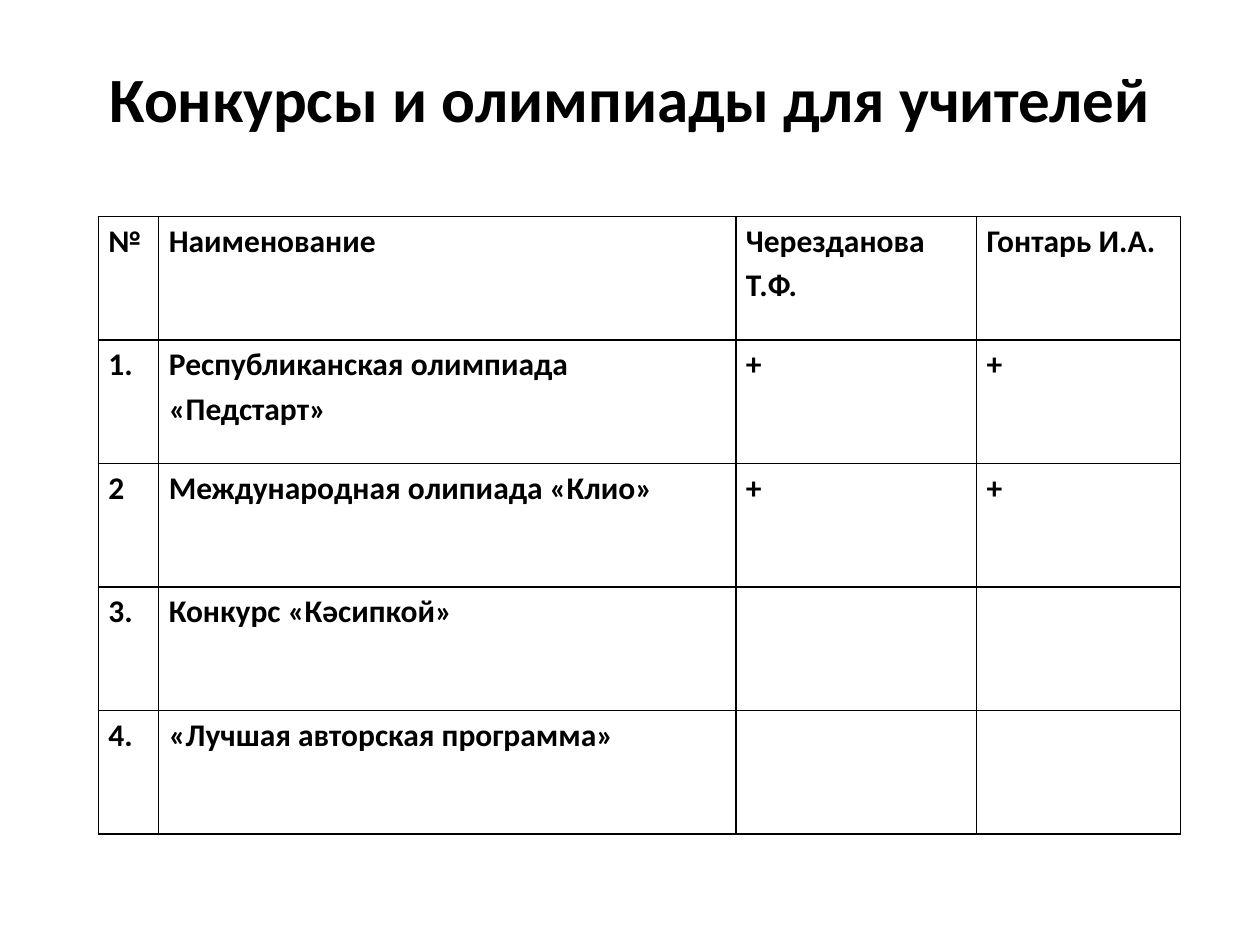
from pptx import Presentation
from pptx.dml.color import RGBColor
from pptx.enum.text import MSO_ANCHOR as Anchor, PP_ALIGN as Align
from pptx.oxml import parse_xml
from pptx.oxml.ns import nsdecls
from pptx.util import Inches, Pt

BLACK = RGBColor(0, 0, 0)
WHITE = RGBColor(255, 255, 255)

COLUMN_WIDTHS = [0.48, 4.58, 1.91, 1.62]
ROW_HEIGHT = 0.984
CONTESTS = [
    ["№", "Наименование", "Черезданова Т.Ф.", "Гонтарь И.А."],
    ["1.", "Республиканская олимпиада «Педстарт»", "+", "+"],
    ["2", "Международная олипиада «Клио»", "+", "+"],
    ["3.", "Конкурс «Кәсипкой»", "", ""],
    ["4.", "«Лучшая авторская программа»", "", ""],
]


class SlideBuilder:
    font = "Calibri"
    title_size = Pt(36)
    cell_size = Pt(18)
    cell_inset = Inches(0.08)
    line_spacing = 1.15
    border_width = Pt(1)

    def __init__(self, page):
        self.page = page

    def background(self, color):
        fill = self.page.background.fill
        fill.solid()
        fill.fore_color.rgb = color

    def format_text(self, para, size):
        para.font.size = size
        for span in para.runs:
            span.font.name = self.font
            span.font.size = size
            span.font.bold = True
            span.font.color.rgb = BLACK

    def title(self, text, left, top, width, height):
        box = self.page.shapes.add_textbox(
            Inches(left), Inches(top), Inches(width), Inches(height)
        )
        frame = box.text_frame
        frame.word_wrap = True
        frame.vertical_anchor = Anchor.MIDDLE
        frame.text = text
        para = frame.paragraphs[0]
        para.alignment = Align.CENTER
        self.format_text(para, self.title_size)

    def borders(self, cell):
        properties = cell._tc.get_or_add_tcPr()
        for position, side in enumerate(("lnL", "lnR", "lnT", "lnB")):
            line = parse_xml(
                f'<a:{side} {nsdecls("a")} w="{self.border_width}">'
                f'<a:solidFill><a:srgbClr val="{BLACK}"/></a:solidFill>'
                f"</a:{side}>"
            )
            properties.insert(position, line)

    def cell(self, cell, text):
        cell.fill.background()
        cell.margin_left = cell.margin_right = self.cell_inset
        cell.margin_top = cell.margin_bottom = 0
        cell.text_frame.text = text
        para = cell.text_frame.paragraphs[0]
        para.line_spacing = self.line_spacing
        self.format_text(para, self.cell_size)
        self.borders(cell)

    def table(self, rows, left, top, widths, row_height):
        frame = self.page.shapes.add_table(
            len(rows), len(widths), Inches(left), Inches(top),
            Inches(sum(widths)), Inches(row_height * len(rows)),
        )
        table = frame.table
        table.first_row = False
        table.horz_banding = False
        for column, width in zip(table.columns, widths):
            column.width = Inches(width)
        for row, texts in zip(table.rows, rows):
            row.height = Inches(row_height)
            for cell, text in zip(row.cells, texts):
                self.cell(cell, text)


def main():
    deck = Presentation()
    deck.slide_width = Inches(10)
    deck.slide_height = Inches(7.5)
    builder = SlideBuilder(deck.slides.add_slide(deck.slide_layouts[6]))
    builder.background(WHITE)
    builder.title("Конкурсы и олимпиады для учителей", 0.5, 0.3, 9, 0.95)
    builder.table(CONTESTS, 0.78, 1.72, COLUMN_WIDTHS, round(ROW_HEIGHT, 2))
    deck.save("out.pptx")


if __name__ == "__main__":
    main()
